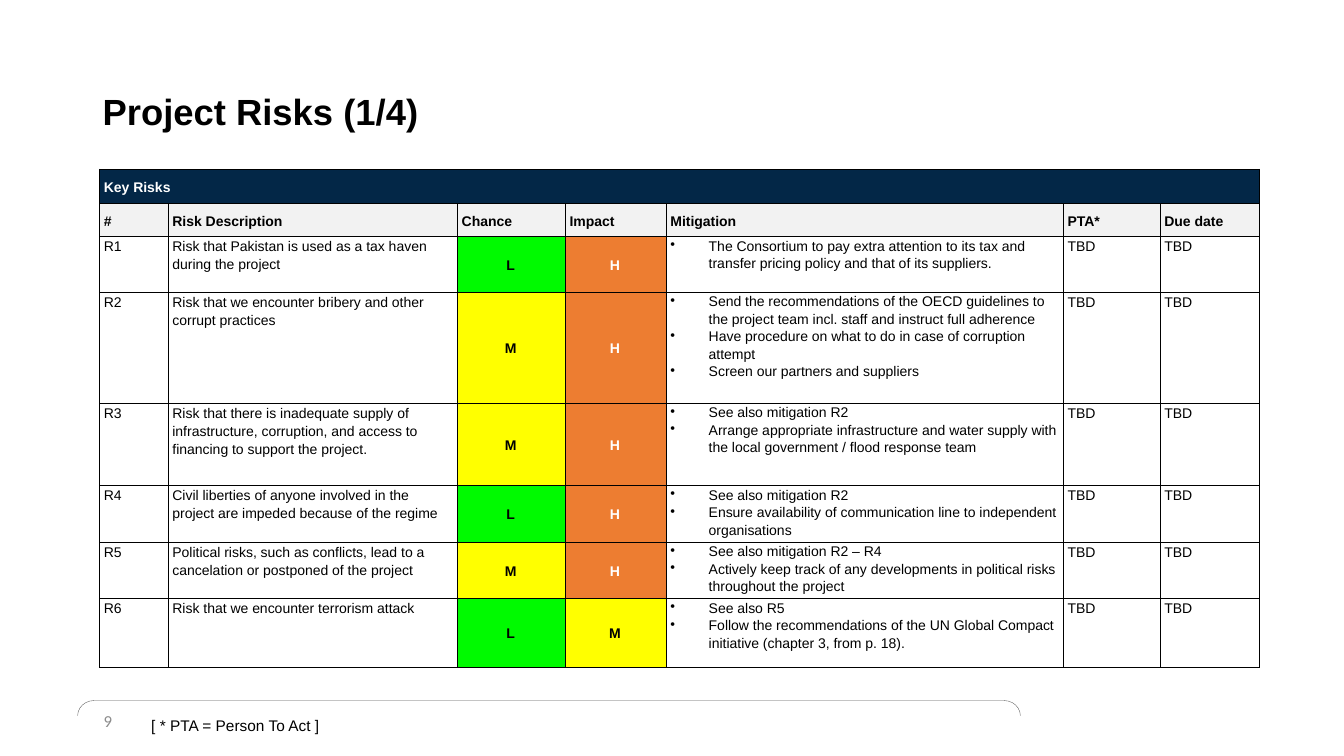
"""Build the project risk register slide."""
from dataclasses import dataclass, field
from typing import Any

from lxml.etree import SubElement
from pptx import Presentation
from pptx.dml.color import RGBColor
from pptx.enum.shapes import MSO_SHAPE
from pptx.enum.text import MSO_ANCHOR, MSO_AUTO_SIZE, PP_ALIGN
from pptx.oxml.ns import qn
from pptx.slide import Slide
from pptx.table import _Cell
from pptx.text.text import TextFrame, _Paragraph
from pptx.util import Inches, Pt


@dataclass(frozen=True)
class Theme:
    """Hold the colours, fonts and type sizes of the slide."""
    black: str = "000000"
    white: str = "FFFFFF"
    navy: str = "032747"
    pale: str = "F2F2F2"
    grey: str = "8C8C8C"
    rule: str = "595959"
    ratings: dict[str, str] = field(
        default_factory=lambda: {"L": "00FA00", "M": "FFFF00", "H": "ED7D31"})
    font: str = "Arial"
    number_font: str = "Calibri"
    title_size: int = 26
    number_size: int = 12
    note_size: int = 11
    table_size: int = 10


@dataclass(frozen=True)
class Type:
    """Describe the look of a piece of text."""
    size: int
    color: str = "000000"
    bold: bool = False
    name: str = "Arial"


@dataclass(frozen=True)
class Label:
    """Describe a text box on the slide."""
    text: str
    bounds: tuple[float, float, float, float]
    look: Type
    frame: dict[str, Any]
    spacing: float = 1.0


@dataclass(frozen=True)
class Risk:
    """Describe one risk in the register."""
    description: str
    chance: str
    impact: str
    mitigation: tuple[str, ...]
    person: str = "TBD"
    due: str = "TBD"


THEME = Theme()
HEADINGS = ("#", "Risk Description", "Chance", "Impact", "Mitigation", "PTA*", "Due date")
COLUMN_WIDTHS = (0.68, 2.87, 1.07, 1, 3.94, 0.96, 0.98)
ROW_HEIGHTS = (0.34, 0.33, 0.55, 1.1, 0.82, 0.56, 0.56, 0.68)
CELL_MARGINS = {"margin_left": Inches(0.04), "margin_right": Inches(0.06),
                "margin_top": 0, "margin_bottom": 0}
RISKS = (
    Risk("Risk that Pakistan is used as a tax haven during the project", "L", "H",
         ("The Consortium to pay extra attention to its tax and transfer pricing policy "
          "and that of its suppliers.",)),
    Risk("Risk that we encounter bribery and other corrupt practices", "M", "H",
         ("Send the recommendations of the OECD guidelines to the project team incl. staff "
          "and instruct full adherence",
          "Have procedure on what to do in case of corruption attempt",
          "Screen our partners and suppliers")),
    Risk("Risk that there is inadequate supply of infrastructure, corruption, and access to "
         "financing to support the project.", "M", "H",
         ("See also mitigation R2",
          "Arrange appropriate infrastructure and water supply with the local government / "
          "flood response team")),
    Risk("Civil liberties of anyone involved in the project are impeded because of the regime",
         "L", "H",
         ("See also mitigation R2",
          "Ensure availability of communication line to independent organisations")),
    Risk("Political risks, such as conflicts, lead to a cancelation or postponed of the project",
         "M", "H",
         ("See also mitigation R2 – R4",
          "Actively keep track of any developments in political risks throughout the project")),
    Risk("Risk that we encounter terrorism attack", "L", "M",
         ("See also R5",
          "Follow the recommendations of the UN Global Compact initiative "
          "(chapter 3, from p. 18).")),
)
LABELS = (
    Label("9", (0.93, 6.95, 3, 0.4),
          Type(THEME.number_size, THEME.grey, name=THEME.number_font),
          {"vertical_anchor": MSO_ANCHOR.MIDDLE}),
    Label("Project Risks (1/4)", (0.92, 0.4, 11.5, 1.45),
          Type(THEME.title_size, bold=True, name=THEME.font),
          {"vertical_anchor": MSO_ANCHOR.MIDDLE}, 0.9),
    Label("[ * PTA = Person To Act ]", (1.46, 7.06, 7.45, 0.26),
          Type(THEME.note_size, name=THEME.font),
          {"auto_size": MSO_AUTO_SIZE.SHAPE_TO_FIT_TEXT}
          | {f"margin_{side}": Inches(0.04) for side in ("left", "top", "right", "bottom")}),
)


def apply(target: Any, formats: dict[str, Any]) -> None:
    """Set each format value on the target."""
    for name, value in formats.items():
        setattr(target, name, value)


def write(frame: TextFrame, lines: tuple[str, ...], look: Type, formats: dict[str, Any],
          bulleted: bool = False) -> None:
    """Write one paragraph for each line."""
    for index, line in enumerate(lines):
        para = frame.add_paragraph() if index else frame.paragraphs[0]
        if bulleted:
            add_bullet(para)
        apply(para, formats)
        span = para.add_run()
        span.text = line
        apply(span.font, {"size": Pt(look.size), "bold": look.bold, "name": look.name})
        span.font.color.rgb = RGBColor.from_string(look.color)


def add_bullet(para: _Paragraph) -> None:
    """Give a paragraph a hanging bullet."""
    properties = para._p.get_or_add_pPr()
    properties.set("marL", str(Inches(0.38)))
    properties.set("indent", str(-Inches(0.38)))
    SubElement(properties, qn("a:buChar"), char="•")


def add_label(page: Slide, label: Label) -> None:
    """Place a text box on the page."""
    box = page.shapes.add_textbox(*map(Inches, label.bounds))
    apply(box.text_frame, {"word_wrap": True} | label.frame)
    write(box.text_frame, (label.text,), label.look, {"line_spacing": label.spacing})


def add_footer_bracket(page: Slide) -> None:
    """Draw the rounded rule above the footer."""
    bracket = page.shapes.add_shape(
        MSO_SHAPE.LEFT_BRACKET, *map(Inches, (5.37, 2.35, 0.15, 9.35)))
    bracket.adjustments[0] = 1.08
    bracket.rotation = 90
    bracket.shadow.inherit = False
    bracket.fill.background()
    bracket.line.color.rgb = RGBColor.from_string(THEME.rule)
    bracket.line.width = Pt(0.25)


def format_cell(cell: _Cell, fill: str | None, centred: bool) -> None:
    """Set the borders, margins, anchor and fill of a cell."""
    properties = cell._tc.get_or_add_tcPr()
    for side in ("lnL", "lnR", "lnT", "lnB"):
        border = SubElement(properties, qn(f"a:{side}"), w=str(Pt(0.75)))
        SubElement(SubElement(border, qn("a:solidFill")), qn("a:srgbClr"), val=THEME.black)
    anchor = MSO_ANCHOR.MIDDLE if centred else MSO_ANCHOR.TOP
    apply(cell, CELL_MARGINS | {"vertical_anchor": anchor})
    if fill:
        cell.fill.solid()
        cell.fill.fore_color.rgb = RGBColor.from_string(fill)
    else:
        cell.fill.background()


def fill_cell(cell: _Cell, lines: tuple[str, ...], fill: str | None = None,
              color: str = THEME.black, align: PP_ALIGN = PP_ALIGN.LEFT,
              bulleted: bool = False) -> None:
    """Format a cell and write its text, bold when it is filled."""
    format_cell(cell, fill, bool(fill))
    look = Type(THEME.table_size, color, bool(fill), THEME.font)
    formats = {"line_spacing": 1.12 if bulleted else 1.15, "alignment": align}
    write(cell.text_frame, lines, look, formats, bulleted)


def fill_rating(cell: _Cell, rating: str) -> None:
    """Write a rating on its own colour."""
    color = THEME.white if rating == "H" else THEME.black
    fill_cell(cell, (rating,), THEME.ratings[rating], color, PP_ALIGN.CENTER)


def add_risk_table(page: Slide) -> None:
    """Build the table of key risks."""
    table = page.shapes.add_table(
        len(ROW_HEIGHTS), len(COLUMN_WIDTHS), *map(Inches, (0.99, 1.68, 11.5, 4.94))).table
    apply(table, {"first_row": False, "horz_banding": False})
    for column, width in zip(table.columns, COLUMN_WIDTHS):
        column.width = Inches(width)
    for row, height in zip(table.rows, ROW_HEIGHTS):
        row.height = Inches(height)
    banner, *rest = table.rows[0].cells
    banner.merge(rest[-1])
    fill_cell(banner, ("Key Risks",), THEME.navy, THEME.white)
    for cell in rest:
        format_cell(cell, THEME.navy, True)
    for cell, heading in zip(table.rows[1].cells, HEADINGS):
        fill_cell(cell, (heading,), THEME.pale)
    for number, risk in enumerate(RISKS, 1):
        code, description, chance, impact, mitigation, person, due = table.rows[number + 1].cells
        fill_cell(code, (f"R{number}",))
        fill_cell(description, (risk.description,))
        fill_rating(chance, risk.chance)
        fill_rating(impact, risk.impact)
        fill_cell(mitigation, risk.mitigation, bulleted=True)
        fill_cell(person, (risk.person,))
        fill_cell(due, (risk.due,))


def main() -> None:
    """Build and save the deck."""
    deck = Presentation()
    apply(deck, {"slide_width": Inches(13.33), "slide_height": Inches(7.5)})
    page = deck.slides.add_slide(deck.slide_layouts[6])
    add_footer_bracket(page)
    for label in LABELS:
        add_label(page, label)
    add_risk_table(page)
    deck.save("out.pptx")


if __name__ == "__main__":
    main()
